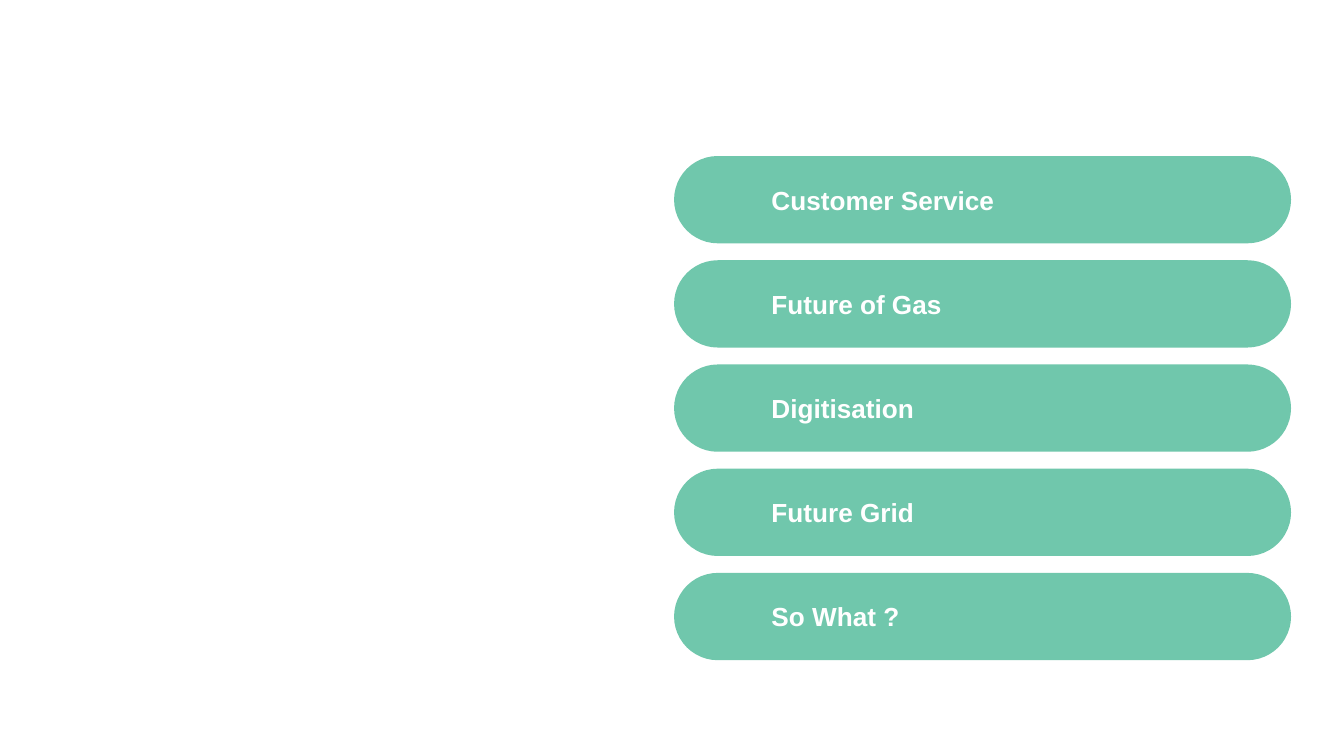
from pptx import Presentation
from pptx.dml.color import RGBColor
from pptx.enum.shapes import MSO_SHAPE as Shape
from pptx.enum.text import MSO_ANCHOR as Anchor, PP_ALIGN as Align
from pptx.util import Cm, Pt

GREEN = RGBColor(0x70, 0xC7, 0xAC)
WHITE = RGBColor(0xFF, 0xFF, 0xFF)

TOPICS = ["Customer Service", "Future of Gas", "Digitisation", "Future Grid", "So What ?"]
LEFT, FIRST_TOP = 12.74, 2.95
WIDTH, HEIGHT = 11.66, 1.65
PITCH = 1.97


def add_topic_pill(slide, text, top):
    shape = slide.shapes.add_shape(
        Shape.ROUNDED_RECTANGLE, Cm(LEFT), Cm(top), Cm(WIDTH), Cm(HEIGHT))
    shape.adjustments[0] = 0.5
    shape.shadow.inherit = False
    shape.fill.solid()
    shape.fill.fore_color.rgb = GREEN
    shape.line.fill.background()

    frame = shape.text_frame
    frame.word_wrap = True
    frame.vertical_anchor = Anchor.MIDDLE
    frame.margin_left, frame.margin_right = Cm(1.6), Cm(0.25)
    frame.margin_top = frame.margin_bottom = Cm(0.13)

    paragraph = frame.paragraphs[0]
    paragraph.alignment = Align.LEFT
    run = paragraph.add_run()
    run.text = text
    run.font.name = "Arial"
    run.font.size = Pt(14)
    run.font.bold = True
    run.font.color.rgb = WHITE


def main():
    presentation = Presentation()
    presentation.slide_width = Cm(25.4)
    presentation.slide_height = Cm(14.29)
    slide = presentation.slides.add_slide(presentation.slide_layouts[6])
    for index, topic in enumerate(TOPICS):
        add_topic_pill(slide, topic, FIRST_TOP + index * PITCH)
    presentation.save("out.pptx")


if __name__ == "__main__":
    main()
